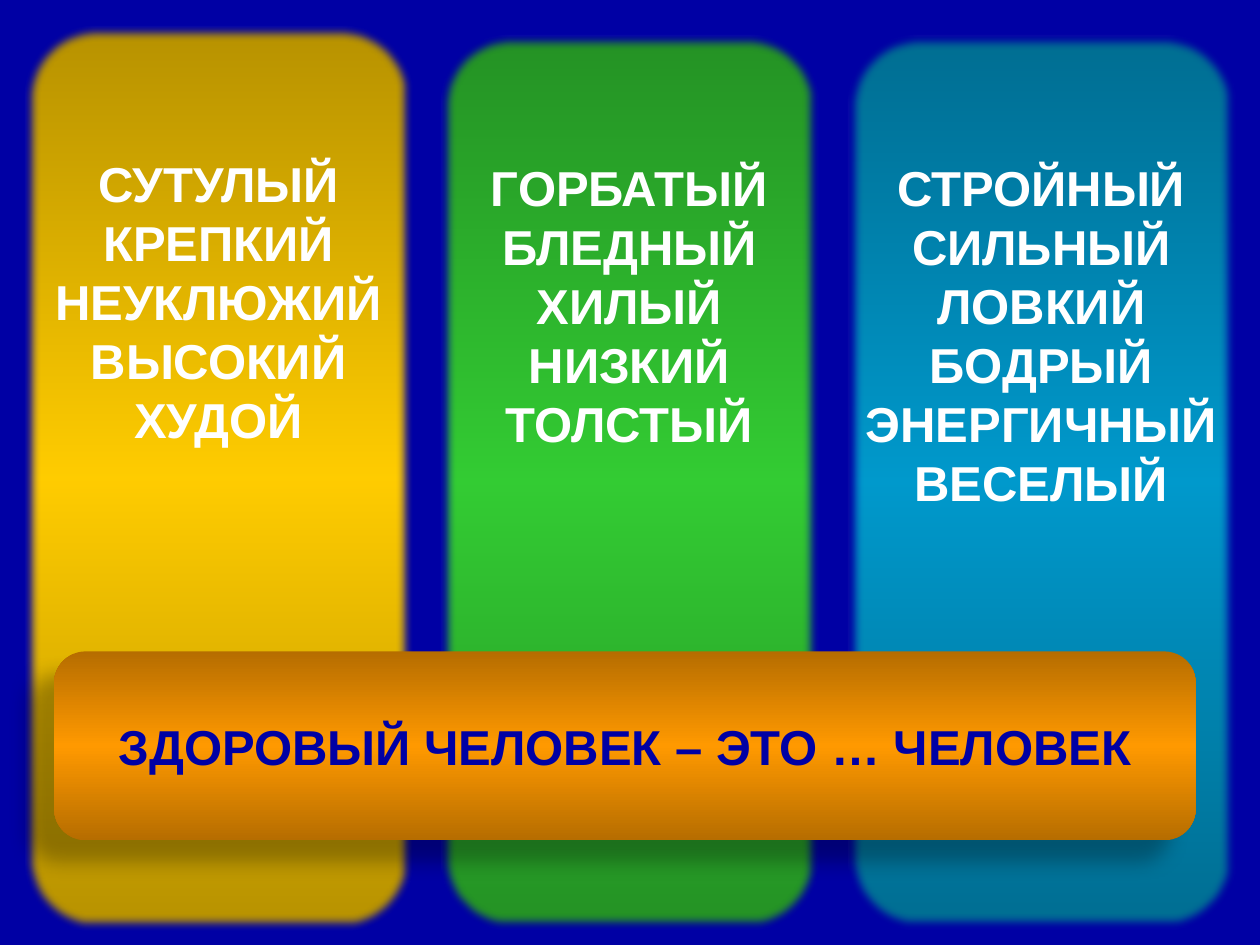
from pptx import Presentation
from pptx import util as u
from pptx.dml.color import RGBColor
from pptx.enum import shapes, text
from pptx.oxml import parse_xml
from pptx.oxml.ns import nsdecls, qn

NAVY, WHITE = "0000A4", "FFFFFF"
LINE_PT = 33.7    # height of one text line
COLUMN_LINES = 11  # lines that fill the centred text block of a column

COLUMNS = [
    ((0.2, 0.21, 3.07, 7.17), "FFCC00",
     ["СУТУЛЫЙ", "КРЕПКИЙ", "НЕУКЛЮЖИЙ", "ВЫСОКИЙ", "ХУДОЙ"]),
    ((3.5, 0.28, 2.99, 7.09), "33CC33",
     ["ГОРБАТЫЙ", "БЛЕДНЫЙ", "ХИЛЫЙ", "НИЗКИЙ", "ТОЛСТЫЙ"]),
    ((6.73, 0.28, 3.07, 7.09), "0099CC",
     ["СТРОЙНЫЙ", "СИЛЬНЫЙ", "ЛОВКИЙ", "БОДРЫЙ", "ЭНЕРГИЧНЫЙ", "ВЕСЕЛЫЙ"]),
]


def color(value):
    return RGBColor.from_string(value)


def fill_gradient(shape, base):
    """Vertical gradient: shaded at both ends, full colour in the middle."""
    shape.fill.gradient()
    shape.fill.gradient_angle = 270
    stops = shape.fill._xPr.find(qn("a:gradFill")).find(qn("a:gsLst"))
    for stop in list(stops):
        stops.remove(stop)
    shade = '<a:shade val="46275"/>'
    for position, change in ((0, shade), (50, ""), (100, shade)):
        stops.append(parse_xml(
            f'<a:gs {nsdecls("a")} pos="{position * 1000}">'
            f'<a:srgbClr val="{base}">{change}</a:srgbClr></a:gs>'))


def add_panel(page, box, base, lines, ink, effect):
    """Rounded gradient panel with centred bold lines and one effect."""
    panel = page.shapes.add_shape(
        shapes.MSO_SHAPE.ROUNDED_RECTANGLE, *map(u.Inches, box))
    panel.adjustments[0] = 0.167
    fill_gradient(panel, base)
    panel.line.fill.background()
    panel.shadow.inherit = False
    panel._element.spPr.find(qn("a:effectLst")).append(parse_xml(effect))

    frame = panel.text_frame
    frame.word_wrap = False
    frame.vertical_anchor = text.MSO_ANCHOR.MIDDLE
    for index, line in enumerate(lines):
        para = frame.paragraphs[0] if index == 0 else frame.add_paragraph()
        para.text = line
        para.alignment = text.PP_ALIGN.CENTER
        para.font.name = "Arial"
        para.font.size = u.Pt(28)
        para.font.bold = True
        para.font.color.rgb = color(ink)
    return panel


def add_column(page, box, base, words):
    soft_edge = f'<a:softEdge {nsdecls("a")} rad="{u.Pt(5)}"/>'
    column = add_panel(page, box, base, words, WHITE, soft_edge)
    column.line.color.rgb = color(WHITE)
    column.line.width = u.Pt(0.75)
    # Room below the words lifts them to the upper part of the column
    spare = COLUMN_LINES - len(words)
    column.text_frame.margin_bottom = u.Inches(0.05) + u.Pt(LINE_PT * spare)
    for para in column.text_frame.paragraphs:
        para.line_spacing = u.Pt(LINE_PT)


def add_banner(page, box):
    shadow = (
        f'<a:outerShdw {nsdecls("a")} blurRad="{u.Pt(11.8)}" '
        f'dist="{u.Pt(19.7)}" dir="{141 * 60000}" algn="ctr" rotWithShape="0">'
        '<a:srgbClr val="000000"><a:alpha val="28000"/></a:srgbClr>'
        '</a:outerShdw>')
    add_panel(page, box, "FF9900", ["ЗДОРОВЫЙ ЧЕЛОВЕК – ЭТО … ЧЕЛОВЕК"],
              NAVY, shadow)


def main():
    deck = Presentation()
    deck.slide_width, deck.slide_height = u.Inches(10), u.Inches(7.5)
    page = deck.slides.add_slide(deck.slide_layouts[6])
    page.background.fill.solid()
    page.background.fill.fore_color.rgb = color(NAVY)

    # Three columns of words
    for box, base, words in COLUMNS:
        add_column(page, box, base, words)
    # Sentence across the columns
    add_banner(page, (0.43, 5.17, 9.06, 1.5))

    deck.save("out.pptx")


if __name__ == "__main__":
    main()
